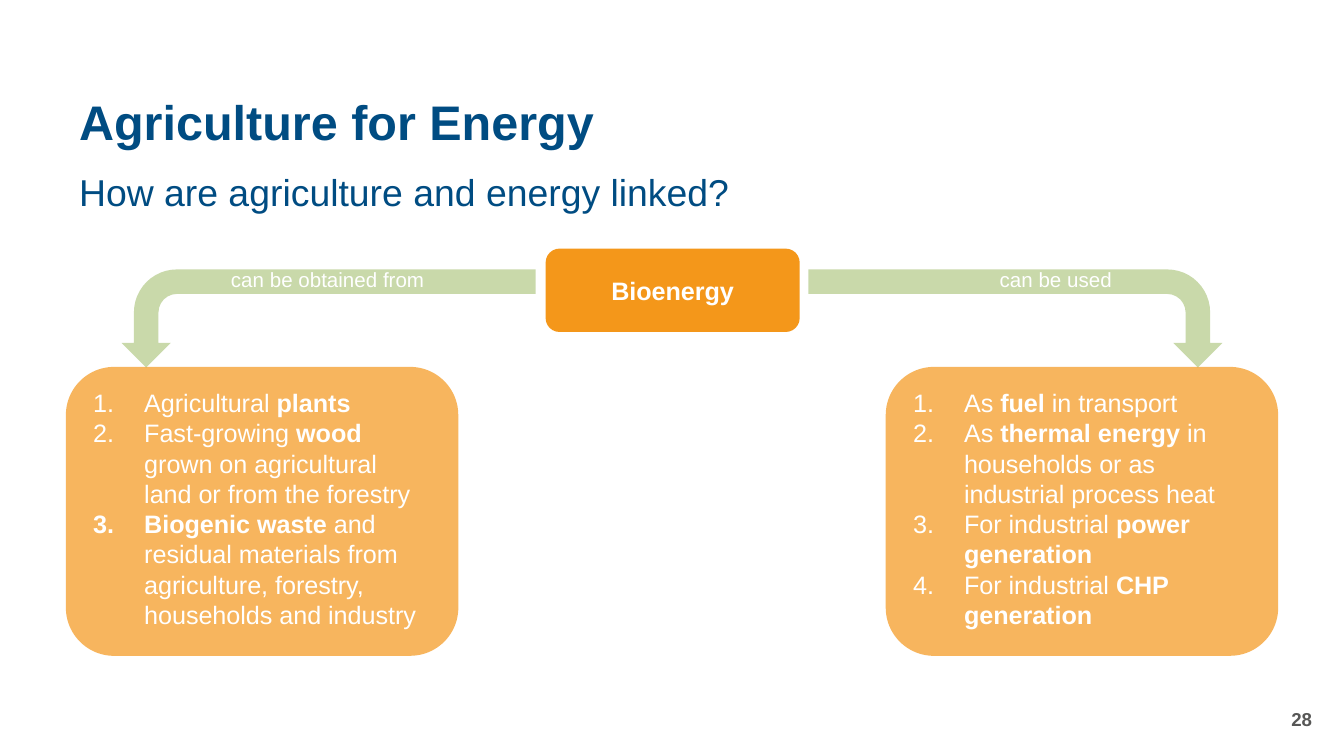
from dataclasses import dataclass

from lxml.etree import SubElement
from pptx import Presentation
from pptx.dml.color import RGBColor
from pptx.enum.shapes import MSO_SHAPE
from pptx.enum.text import MSO_ANCHOR, PP_ALIGN
from pptx.oxml.ns import qn
from pptx.util import Emu, Inches, Pt

FONT = "Arial"
WHITE, NAVY, GREY = "FFFFFF", "004C82", "575756"
ORANGE, GREEN = "F4971A", "79A12C"
SLIDE_W = 10
SLIDE_H = SLIDE_W * 9 / 16
BOX_W, BOX_TOP, BOX_H = 2.92, 2.73, 2.15
ARROW_W, ARROW_H = 0.73, 3.08


@dataclass
class Branch:
    box_left: float
    items: list[str]
    arrow_left: float
    rotation: int
    flipped: bool
    label: str
    label_left: float
    label_width: float


BRANCHES = [
    Branch(0.49, [
        "Agricultural **plants**",
        "Fast-growing **wood** grown on agricultural land or from the forestry",
        "**Biogenic waste** and residual materials from agriculture, forestry, "
        "households and industry",
    ], 2.08, 270, True, "can be obtained from", 1.62, 1.65),
    Branch(6.59, [
        "As **fuel** in transport",
        "As **thermal energy **in households or as industrial process heat",
        "For industrial **power generation**",
        "For industrial **CHP generation**",
    ], 7.19, 90, False, "can be used", 7.34, 1.04),
]


def color(value: str) -> RGBColor:
    return RGBColor.from_string(value)


def write(tf, text: str, *, size: float, fill: str = WHITE, bold: bool = False,
          align=PP_ALIGN.LEFT, anchor=MSO_ANCHOR.TOP, spacing: float | None = None,
          wrap: bool = True, numbered: bool = False) -> None:
    tf.word_wrap = wrap
    tf.vertical_anchor = anchor
    for i, line in enumerate(text.split("\n")):
        p = tf.paragraphs[0] if i == 0 else tf.add_paragraph()
        p.alignment = align
        p.line_spacing = spacing
        if numbered:
            pPr = p._p.get_or_add_pPr()
            pPr.set("marL", str(Inches(0.38)))
            pPr.set("indent", str(Inches(-0.38)))
            SubElement(pPr, qn("a:buFont")).set("typeface", "+mj-lt")
            SubElement(pPr, qn("a:buAutoNum")).set("type", "arabicPeriod")
        for j, part in enumerate(line.split("**")):
            if not part:
                continue
            r = p.add_run()
            r.text = part
            r.font.name = FONT
            r.font.size = Pt(size)
            r.font.bold = bold or j % 2 == 1
            r.font.color.rgb = color(fill)


def add_text(s, left: float, top: float, width: float, height: float,
             text: str, **fmt):
    sp = s.shapes.add_textbox(Inches(left), Inches(top), Inches(width), Inches(height))
    write(sp.text_frame, text, **fmt)
    return sp


def add_filled(s, kind, left: float, top: float, width: float, height: float,
               fill: str, opacity: int = 100):
    sp = s.shapes.add_shape(kind, Inches(left), Inches(top), Inches(width), Inches(height))
    sp.shadow.inherit = False
    sp.line.fill.background()
    sp.fill.solid()
    sp.fill.fore_color.rgb = color(fill)
    if opacity < 100:
        clr = sp._element.spPr.find(qn("a:solidFill"))[0]
        SubElement(clr, qn("a:alpha")).set("val", str(opacity * 1000))
    return sp


def add_branch(s, branch: Branch) -> None:
    box = add_filled(s, MSO_SHAPE.ROUNDED_RECTANGLE, branch.box_left, BOX_TOP,
                     BOX_W, BOX_H, ORANGE, 70)
    write(box.text_frame, "\n".join(branch.items), size=13.5, numbered=True)
    arrow = add_filled(s, MSO_SHAPE.BENT_ARROW, branch.arrow_left, 0.83,
                       ARROW_W, ARROW_H, GREEN, 40)
    arrow.rotation = branch.rotation
    if branch.flipped:
        arrow._element.spPr.xfrm.set("flipH", "1")
    add_text(s, branch.label_left, 1.94, branch.label_width, 0.29, branch.label,
             size=11, wrap=False)


def main() -> None:
    prs = Presentation()
    prs.slide_width, prs.slide_height = Inches(SLIDE_W), Inches(SLIDE_H)
    s = prs.slides.add_slide(prs.slide_layouts[6])

    add_text(s, 0.49, 0.63, 9.37, 0.59, "Agriculture for Energy", size=26, fill=NAVY,
             bold=True, anchor=MSO_ANCHOR.MIDDLE, spacing=0.9)
    subtitle = add_text(s, 0.49, 1.3, 9.37, 0.3, "How are agriculture and energy linked?",
                        size=20, fill=NAVY, spacing=0.9)
    subtitle.text_frame.margin_top = subtitle.text_frame.margin_bottom = Emu(0)
    add_text(s, 7.61, 5.2, 2.25, 0.3, "28", size=10, fill=GREY, bold=True,
             align=PP_ALIGN.RIGHT, anchor=MSO_ANCHOR.MIDDLE)

    hub = add_filled(s, MSO_SHAPE.ROUNDED_RECTANGLE, 4.06, 1.85, 1.89, 0.62, ORANGE)
    write(hub.text_frame, "Bioenergy", size=13.5, bold=True,
          align=PP_ALIGN.CENTER, anchor=MSO_ANCHOR.MIDDLE)
    for branch in BRANCHES:
        add_branch(s, branch)

    prs.save("out.pptx")


if __name__ == "__main__":
    main()
